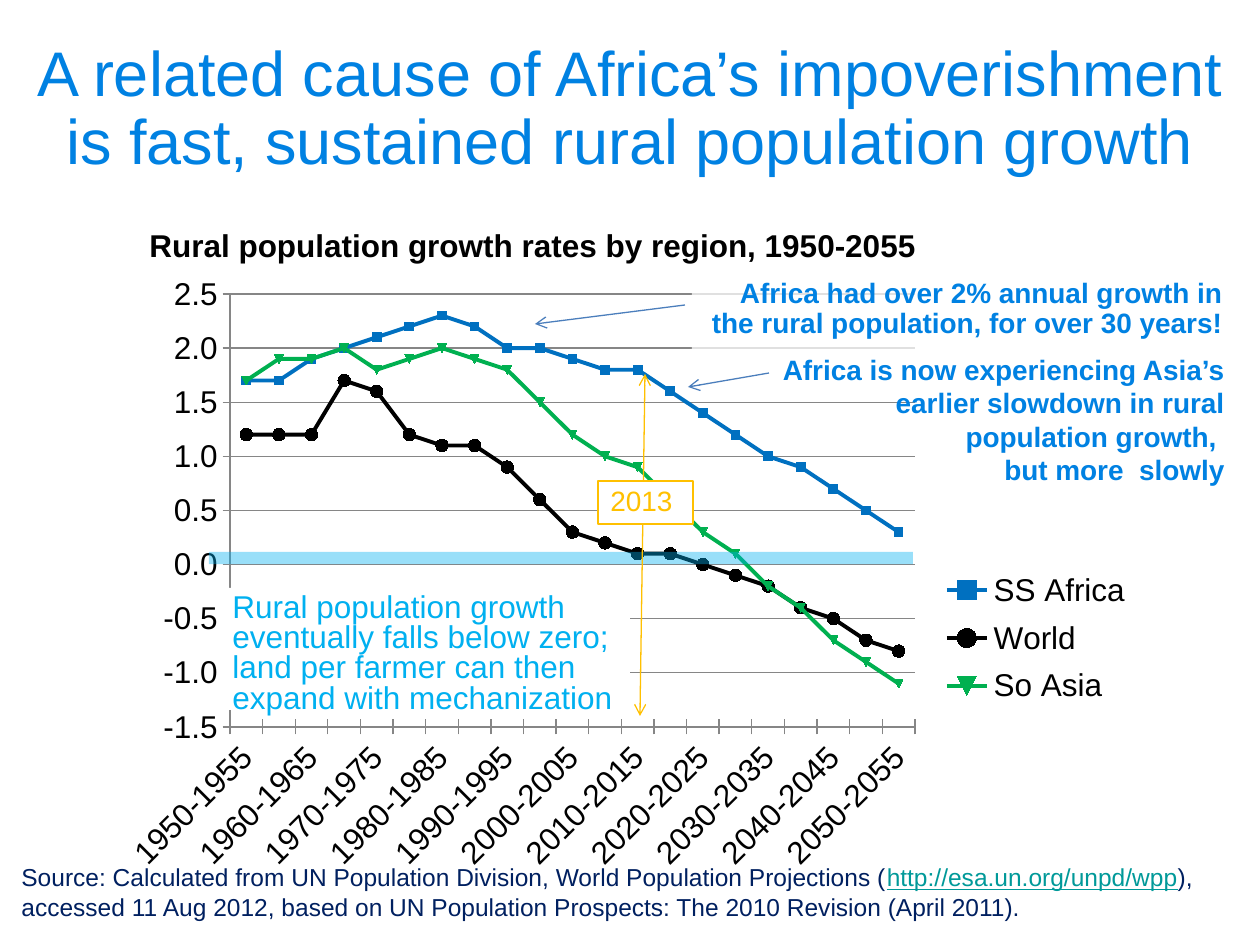
from lxml import etree
from pptx import Presentation
from pptx.chart.data import CategoryChartData
from pptx.dml.color import RGBColor
from pptx.enum.chart import (XL_AXIS_CROSSES, XL_CHART_TYPE, XL_LEGEND_POSITION,
                             XL_MARKER_STYLE, XL_TICK_LABEL_POSITION, XL_TICK_MARK)
from pptx.enum.shapes import MSO_CONNECTOR, MSO_SHAPE
from pptx.enum.text import MSO_ANCHOR, MSO_AUTO_SIZE, PP_ALIGN
from pptx.oxml.ns import qn
from pptx.util import Emu, Pt

THEME = {
    "font": "Arial",
    "title": 36, "large": 18, "note": 16, "source": 14,
    "blue": "0081E2", "sky": "00B0F0", "navy": "002060", "link": "009999",
    "black": "000000", "white": "FFFFFF", "gold": "FFC000", "arrow": "4B7EBC",
    "grid": "868686", "africa": "0070C0", "asia": "00B050",
}

SOURCE = {
    "at": (9, 856, 1251, 102), "fill": "white", "size": "source", "color": "navy", "grow": True,
    "text": [[("Source: Calculated from UN Population Division, World Population Projections (", "navy"),
              ("http://esa.un.org/unpd/wpp", "link"),
              ("), accessed 11 Aug 2012, based on UN Population Prospects: "
               "The 2010 Revision (April 2011).", "navy")]],
}
CAPTIONS = [
    {"at": (220, 588, 410, 122), "fill": "white", "size": "large", "color": "sky", "spacing": 0.8,
     "text": ["Rural population growth eventually falls below zero;",
              "land per farmer can then expand with mechanization"]},
    {"at": (692, 273, 543, 105), "fill": "white", "alpha": 75, "size": "note", "color": "blue",
     "bold": True, "align": PP_ALIGN.RIGHT, "spacing": 0.9,
     "text": ["Africa had over 2% annual growth in the rural population, for over 30 years!"]},
    {"at": (137, 220, 1018, 50), "size": "large", "color": "black", "bold": True, "grow": True,
     "text": ["Rural population growth rates by region, 1950-2055"]},
    {"at": (0, 32, 1260, 157), "size": "title", "color": "blue", "align": PP_ALIGN.CENTER,
     "spacing": 0.9, "anchor": MSO_ANCHOR.MIDDLE,
     "text": ["A related cause of Africa’s impoverishment is fast, sustained rural population growth"]},
    {"at": (760, 346, 477, 149), "size": "note", "color": "blue", "bold": True, "grow": True,
     "align": PP_ALIGN.RIGHT,
     "text": ["Africa is now experiencing Asia’s earlier slowdown in rural population growth, ",
              "but more  slowly"]},
]
LINES = [
    {"ends": (685, 305, 535, 324), "color": "arrow", "tips": ["tailEnd"]},
    {"ends": (769, 373, 688, 387), "color": "arrow", "tips": ["tailEnd"]},
    {"ends": (209, 558, 913, 558), "color": "sky", "width": 7, "alpha": 40},
    {"ends": (645, 374, 640, 716), "color": "gold", "tips": ["headEnd", "tailEnd"]},
]
YEAR = {"at": (598, 481, 95, 43), "fill": "white", "border": "gold", "size": "note",
        "color": "gold", "spacing": 0.9, "grow": True, "text": ["2013"]}

CHART_AT = (107, 263, 1038, 620)
PLOT_AT = (230, 294, 685, 433)
LEGEND_AT = (939, 558, 196, 152)
PERIODS = [f"{year}-{year + 5}" for year in range(1950, 2055, 5)]
REGIONS = [
    ("SS Africa", "africa", None, 5,
     [1.7, 1.7, 1.9, 2, 2.1, 2.2, 2.3, 2.2, 2, 2, 1.9, 1.8, 1.8, 1.6, 1.4, 1.2, 1, 0.9, 0.7, 0.5, 0.3]),
    ("World", "black", XL_MARKER_STYLE.CIRCLE, 7,
     [1.2, 1.2, 1.2, 1.7, 1.6, 1.2, 1.1, 1.1, 0.9, 0.6, 0.3, 0.2, 0.1, 0.1, 0, -0.1, -0.2, -0.4,
      -0.5, -0.7, -0.8]),
    ("So Asia", "asia", None, 5,
     [1.7, 1.9, 1.9, 2, 1.8, 1.9, 2, 1.9, 1.8, 1.5, 1.2, 1, 0.9, 0.6, 0.3, 0.1, -0.2, -0.4, -0.7,
      -0.9, -1.1]),
]


def px(*lengths):
    return [Emu(round(length * 914400 / 126)) for length in lengths]


def rgb(name):
    return RGBColor.from_string(THEME[name])


def paint(fill, name, alpha=None):
    fill.solid()
    fill.fore_color.rgb = rgb(name)
    if alpha:
        color = fill._xPr.find(f"{qn('a:solidFill')}/{qn('a:srgbClr')}")
        etree.SubElement(color, qn("a:alpha"), val=str(alpha * 1000))


def style_font(font, size, color, bold=False):
    formats = {"name": THEME["font"], "size": Pt(THEME[size]), "bold": bold}
    for key, value in formats.items():
        setattr(font, key, value)
    font.color.rgb = rgb(color)


def add_caption(slide, item):
    if "fill" in item:
        box = slide.shapes.add_shape(MSO_SHAPE.RECTANGLE, *px(*item["at"]))
        box.shadow.inherit = False
        paint(box.fill, item["fill"], item.get("alpha"))
        if "border" in item:
            paint(box.line.fill, item["border"])
            box.line.width = Pt(0.75)
        else:
            box.line.fill.background()
    else:
        box = slide.shapes.add_textbox(*px(*item["at"]))
    frame = box.text_frame
    formats = {
        "word_wrap": True,
        "vertical_anchor": item.get("anchor", MSO_ANCHOR.TOP),
        "auto_size": MSO_AUTO_SIZE.SHAPE_TO_FIT_TEXT if item.get("grow") else MSO_AUTO_SIZE.NONE,
    }
    for key, value in formats.items():
        setattr(frame, key, value)
    for index, content in enumerate(item["text"]):
        paragraph = frame.add_paragraph() if index else frame.paragraphs[0]
        paragraph.alignment = item.get("align", PP_ALIGN.LEFT)
        paragraph.line_spacing = item.get("spacing", 1.0)
        pieces = [(content, item["color"])] if isinstance(content, str) else content
        for words, color in pieces:
            run = paragraph.add_run()
            run.text = words
            style_font(run.font, item["size"], color, item.get("bold", False))
            run.font.underline = color == "link"


def add_line(slide, item):
    line = slide.shapes.add_connector(MSO_CONNECTOR.STRAIGHT, *px(*item["ends"]))
    line.line.width = Pt(item.get("width", 0.75))
    paint(line.line.fill, item["color"], item.get("alpha"))
    outline = line.line._get_or_add_ln()
    for tip in item.get("tips", []):
        etree.SubElement(outline, qn(f"a:{tip}"), type="arrow")
    etree.SubElement(line._element.spPr, qn("a:effectLst"))


def place(parent, index, area, inner=False):
    for old in parent.findall(qn("c:layout")):
        parent.remove(old)
    layout = etree.Element(qn("c:layout"))
    manual = etree.SubElement(layout, qn("c:manualLayout"))
    left, top, width, height = CHART_AT
    fractions = [(area[0] - left) / width, (area[1] - top) / height, area[2] / width, area[3] / height]
    settings = [("layoutTarget", "inner")] if inner else []
    settings += [("xMode", "edge"), ("yMode", "edge")]
    settings += [(key, f"{value:.2f}" if not inner else f"{value:.4f}")
                 for key, value in zip("xywh", fractions)]
    for key, value in settings:
        etree.SubElement(manual, qn(f"c:{key}"), val=value)
    parent.insert(index, layout)


def add_growth_chart(slide):
    data = CategoryChartData(number_format="0.0")
    data.categories = PERIODS
    for name, _, _, _, rates in REGIONS:
        data.add_series(name, rates)
    chart = slide.shapes.add_chart(XL_CHART_TYPE.LINE_MARKERS, *px(*CHART_AT), data).chart
    chart.has_title = False
    style_font(chart.font, "large", "black")
    chart.has_legend = True
    legend = chart.legend
    legend.position = XL_LEGEND_POSITION.RIGHT
    legend.include_in_layout = False
    style_font(legend.font, "large", "black")
    chart.plots[0].vary_by_categories = False

    periods, rates = chart.category_axis, chart.value_axis
    for axis in (periods, rates):
        axis.major_tick_mark = XL_TICK_MARK.CROSS
        axis.tick_label_position = XL_TICK_LABEL_POSITION.LOW
        style_font(axis.tick_labels.font, "large", "black")
        paint(axis.format.line.fill, "grid")
    formats = {"minimum_scale": -1.5, "maximum_scale": 2.5, "major_unit": 0.5,
               "has_major_gridlines": True, "crosses": XL_AXIS_CROSSES.MINIMUM}
    for key, value in formats.items():
        setattr(rates, key, value)
    paint(rates.major_gridlines.format.line.fill, "grid")
    rates.tick_labels.number_format = "#,##0.0"
    rates.tick_labels.number_format_is_linked = False
    periods._element.find(f"{qn('c:txPr')}/{qn('a:bodyPr')}").set("rot", "-2700000")
    skip = etree.Element(qn("c:tickLblSkip"), val="2")
    periods._element.find(qn("c:noMultiLvlLbl")).addprevious(skip)

    for series, (_, color, symbol, size, _) in zip(chart.plots[0].series, REGIONS):
        series.smooth = False
        series.format.line.width = Pt(2.25)
        paint(series.format.line.fill, color)
        if symbol:
            series.marker.style = symbol
        series.marker.size = size
        paint(series.marker.format.fill, color)
        paint(series.marker.format.line.fill, color)
    place(chart._chartSpace.find(f"{qn('c:chart')}/{qn('c:plotArea')}"), 0, PLOT_AT, inner=True)
    place(legend._element, 1, LEGEND_AT)


def main():
    deck = Presentation()
    deck.slide_width, deck.slide_height = px(1260, 945)
    slide = deck.slides.add_slide(deck.slide_layouts[6])
    add_caption(slide, SOURCE)
    add_growth_chart(slide)
    for caption in CAPTIONS:
        add_caption(slide, caption)
    for line in LINES:
        add_line(slide, line)
    add_caption(slide, YEAR)
    deck.save("out.pptx")


if __name__ == "__main__":
    main()
